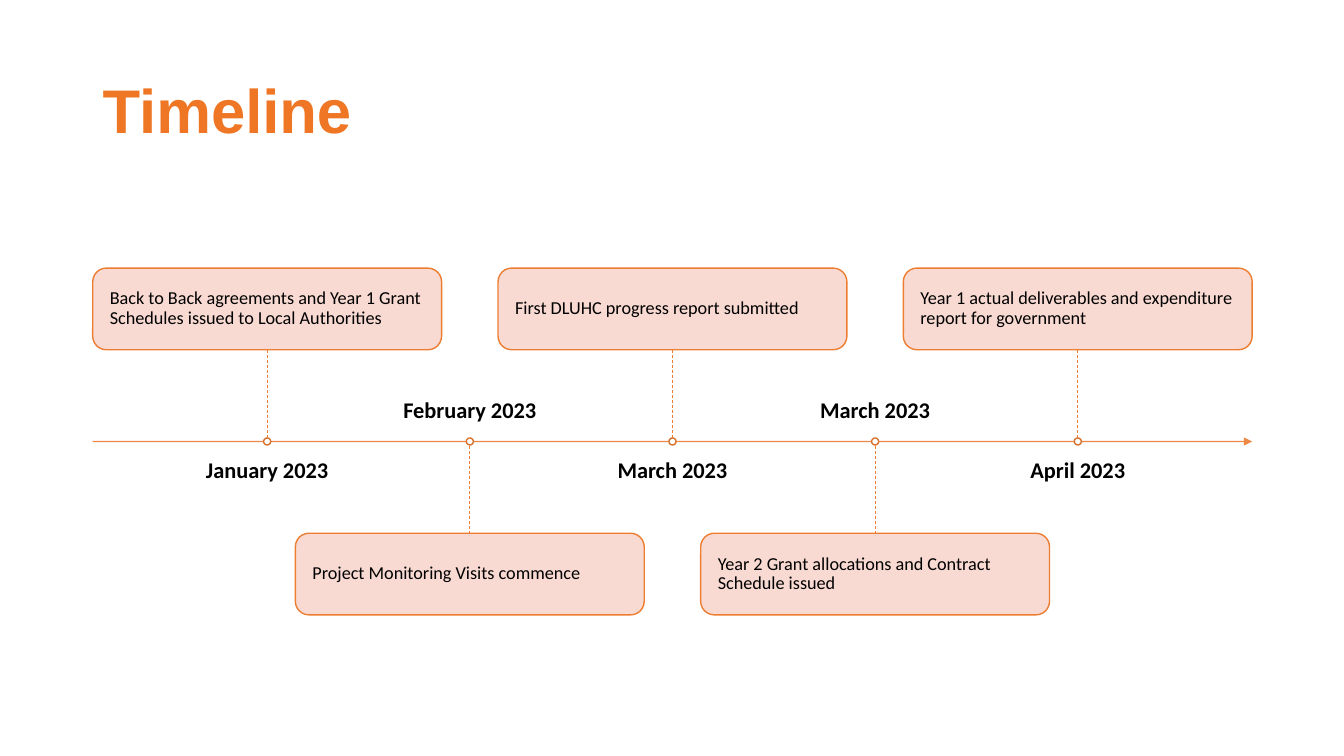
from lxml import etree
from pptx import Presentation
from pptx import util as u
from pptx.dml.color import RGBColor
from pptx.enum import dml, shapes, text
from pptx.oxml.ns import qn

WIDTH, HEIGHT = 13.33, 7.5
ORANGE, TITLE_ORANGE, RING = "ED7D31", "EE7624", "D7712C"
PEACH, WHITE, BLACK = "F8D7CE", "FFFFFF", "000000"

# Timeline grid: cards are spread evenly so that the outer ones meet the axis ends
AXIS_LEFT, AXIS_WIDTH, AXIS_Y = 0.92, 11.5, 4.38
CARD_W, CARD_H = 3.46, 0.81
CARD_GAP = 0.91
LABEL_W, LABEL_H, LABEL_GAP = 3.04, 0.54, 0.175
DOT = 0.07

MILESTONES = [
    ("January 2023", "Back to Back agreements and Year 1 Grant Schedules issued to Local Authorities"),
    ("February 2023", "Project Monitoring Visits commence"),
    ("March 2023", "First DLUHC progress report submitted"),
    ("March 2023", "Year 2 Grant allocations and Contract Schedule issued"),
    ("April 2023", "Year 1 actual deliverables and expenditure report for government"),
]
STEP = (AXIS_WIDTH - CARD_W) / (len(MILESTONES) - 1)


def color(value):
    return RGBColor.from_string(value)


def inches(*lengths):
    return [u.Inches(length) for length in lengths]


def set_opacity(parent, percent):
    """Add an alpha value to the solid colour below a fill or line element."""
    rgb = parent.find(qn("a:solidFill")).find(qn("a:srgbClr"))
    etree.SubElement(rgb, qn("a:alpha")).set("val", str(percent * 1000))


def write(box, words, size, font, ink, bold=False, align=text.PP_ALIGN.LEFT,
          anchor=text.MSO_ANCHOR.MIDDLE, inset=(0, 0)):
    frame = box.text_frame
    frame.word_wrap = True
    frame.vertical_anchor = anchor
    frame.margin_left = frame.margin_right = u.Inches(inset[0])
    frame.margin_top = frame.margin_bottom = u.Inches(inset[1])
    para = frame.paragraphs[0]
    para.alignment = align
    para.line_spacing = 0.9
    span = para.add_run()
    span.text = words
    span.font.size = u.Pt(size)
    span.font.name = font
    span.font.bold = bold
    span.font.color.rgb = color(ink)


def add_outlined(page, kind, place, fill, outline):
    shape = page.shapes.add_shape(kind, *inches(*place))
    shape.shadow.inherit = False
    shape.fill.solid()
    shape.fill.fore_color.rgb = color(fill)
    shape.line.color.rgb = color(outline)
    shape.line.width = u.Pt(1)
    return shape


def add_line(page, start, end, weight):
    line = page.shapes.add_connector(shapes.MSO_CONNECTOR.STRAIGHT, *inches(*start, *end))
    line.line.color.rgb = color(ORANGE)
    line.line.width = u.Pt(weight)
    etree.SubElement(line._element.spPr, qn("a:effectLst"))
    return line


def add_title(page, words):
    box = page.shapes.add_textbox(*inches(AXIS_LEFT, 0.4, AXIS_WIDTH, 1.45))
    write(box, words, 44, "Arial", TITLE_ORANGE, bold=True, inset=(0.1, 0.05))


def add_axis(page):
    axis = add_line(page, (AXIS_LEFT, AXIS_Y), (AXIS_LEFT + AXIS_WIDTH, AXIS_Y), 1)
    outline = axis.line._get_or_add_ln()
    set_opacity(outline, 90)
    etree.SubElement(outline, qn("a:tailEnd")).set("type", "triangle")


def add_card(page, left, top, words):
    card = add_outlined(page, shapes.MSO_SHAPE.ROUNDED_RECTANGLE,
                        (left, top, CARD_W, CARD_H), PEACH, ORANGE)
    set_opacity(card._element.spPr, 90)
    write(card, words, 13, "Calibri", BLACK, inset=(0.13, 0.13))


def add_label(page, center, above, words):
    top = AXIS_Y - LABEL_GAP - LABEL_H if above else AXIS_Y + LABEL_GAP
    anchor = text.MSO_ANCHOR.BOTTOM if above else text.MSO_ANCHOR.TOP
    box = page.shapes.add_textbox(*inches(center - LABEL_W / 2, top, LABEL_W, LABEL_H))
    write(box, words, 16, "Calibri", BLACK, bold=True,
          align=text.PP_ALIGN.CENTER, anchor=anchor)


def add_milestone(page, index, date, words):
    """Cards alternate above and below the axis, with the date on the other side."""
    card_above = index % 2 == 0
    left = AXIS_LEFT + index * STEP
    center = left + CARD_W / 2
    edge = AXIS_Y - CARD_GAP if card_above else AXIS_Y + CARD_GAP
    add_card(page, left, edge - CARD_H if card_above else edge, words)
    stem = add_line(page, (center, min(edge, AXIS_Y)), (center, max(edge, AXIS_Y)), 0.5)
    stem.line.dash_style = dml.MSO_LINE.DASH
    add_label(page, center, not card_above, date)
    add_outlined(page, shapes.MSO_SHAPE.OVAL,
                 (center - DOT / 2, AXIS_Y - DOT / 2, DOT, DOT), WHITE, RING)


def main():
    deck = Presentation()
    deck.slide_width, deck.slide_height = inches(WIDTH, HEIGHT)
    page = deck.slides.add_slide(deck.slide_layouts[6])
    add_title(page, "Timeline")
    add_axis(page)
    for index, (date, words) in enumerate(MILESTONES):
        add_milestone(page, index, date, words)
    deck.save("out.pptx")


if __name__ == "__main__":
    main()
